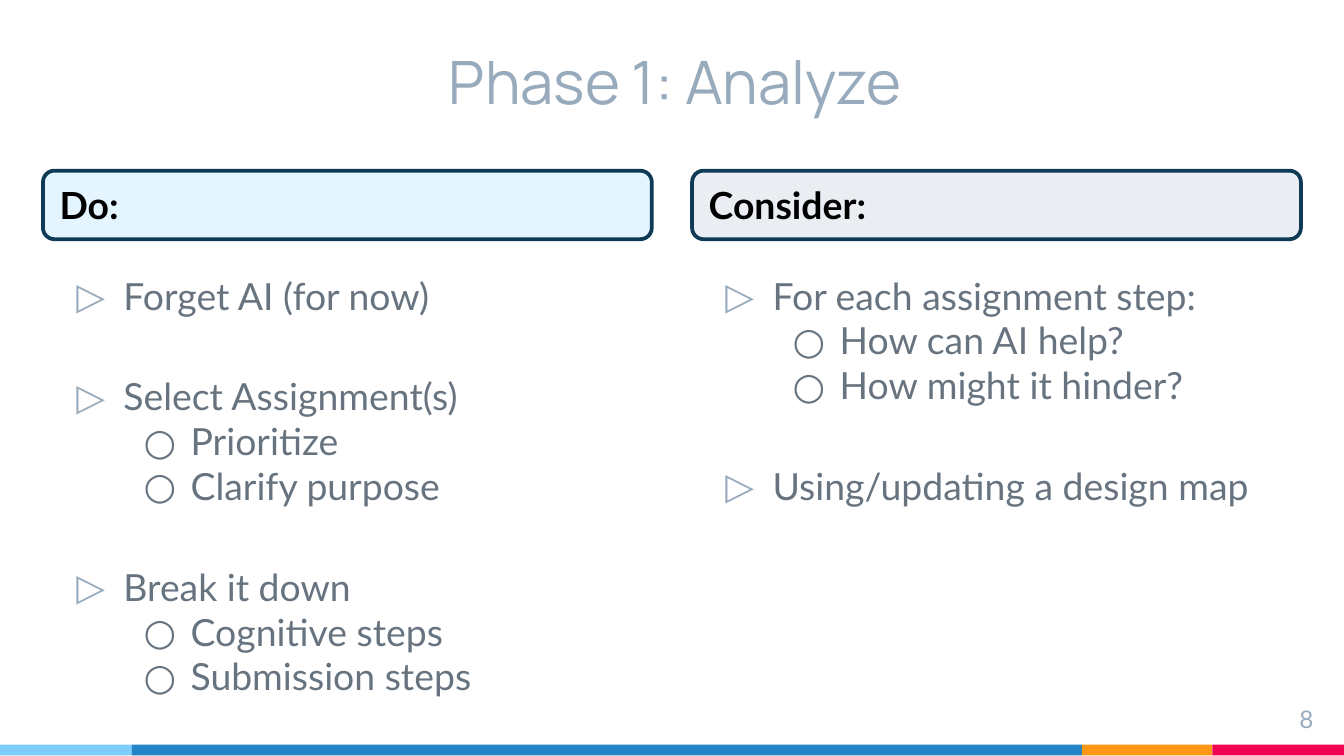
"""Build the "Phase 1: Analyze" slide with two bulleted columns."""
import lxml.etree
import pptx
import pptx.dml.color
import pptx.enum.shapes
import pptx.enum.text
import pptx.oxml.ns
import pptx.util

Inches = pptx.util.Inches
Pt = pptx.util.Pt
RGBColor = pptx.dml.color.RGBColor
SHAPE = pptx.enum.shapes.MSO_SHAPE
ALIGN = pptx.enum.text.PP_ALIGN
ANCHOR = pptx.enum.text.MSO_ANCHOR

MIST = RGBColor(0x97, 0xAB, 0xBC)
SLATE = RGBColor(0x67, 0x74, 0x80)
BLACK = RGBColor(0x00, 0x00, 0x00)
NAVY = RGBColor(0x0E, 0x3A, 0x56)
ICE = RGBColor(0xE5, 0xF5, 0xFF)
FOG = RGBColor(0xEA, 0xEE, 0xF2)
SKY = RGBColor(0x7E, 0xCE, 0xFD)
BLUE = RGBColor(0x21, 0x85, 0xC5)
AMBER = RGBColor(0xFF, 0x97, 0x15)
ROSE = RGBColor(0xF2, 0x02, 0x53)

STRIPES = [(0.98, SKY), (7.07, BLUE), (0.97, AMBER), (0.98, ROSE)]
MARKS = [("▷", MIST, 0.5), ("○", SLATE, 1)]
COLUMNS = [
    (0.32, ICE, "Do:", [
        ("Forget AI (for now)", []),
        ("Select Assignment(s)", ["Prioritize", "Clarify purpose"]),
        ("Break it down", ["Cognitive steps", "Submission steps"]),
    ]),
    (5.15, FOG, "Consider:", [
        ("For each assignment step:", ["How can AI help?", "How might it hinder?"]),
        ("Using/updating a design map", []),
    ]),
]
WIDTH = 4.53


def write(para, text, size=20, color=SLATE, font="Lato", bold=False, align=ALIGN.LEFT):
    para.alignment = align
    run = para.add_run()
    run.text = text
    run.font.size = Pt(size)
    run.font.color.rgb = color
    run.font.name = font
    run.font.bold = bold


def add_box(slide, left, top, width, height, anchor=ANCHOR.TOP):
    box = slide.shapes.add_textbox(Inches(left), Inches(top), Inches(width), Inches(height))
    frame = box.text_frame
    frame.word_wrap = True
    frame.vertical_anchor = anchor
    frame.margin_left = frame.margin_right = Inches(0.1)
    frame.margin_top = frame.margin_bottom = Inches(0.1)
    return frame


def add_block(slide, kind, left, top, width, height, fill):
    block = slide.shapes.add_shape(
        kind, Inches(left), Inches(top), Inches(width), Inches(height))
    block.shadow.inherit = False
    block.fill.solid()
    block.fill.fore_color.rgb = fill
    block.line.fill.background()
    return block


def add_stripes(slide):
    left = 0
    for width, color in STRIPES:
        add_block(slide, SHAPE.RECTANGLE, left, 5.54, width, 0.08, color)
        left += width


def add_header(slide, left, fill, text):
    block = add_block(slide, SHAPE.ROUNDED_RECTANGLE, left, 1.27, WIDTH, 0.51, fill)
    block.line.color.rgb = NAVY
    block.line.width = Pt(2)
    block.text_frame.vertical_anchor = ANCHOR.MIDDLE
    write(block.text_frame.paragraphs[0], text, color=BLACK, bold=True)


def add_mark(para, level):
    char, color, indent = MARKS[level]
    para.level = level
    props = para._p.get_or_add_pPr()
    props.set("marL", str(Inches(indent)))
    props.set("indent", str(Inches(-0.35)))
    name = pptx.oxml.ns.qn
    tint = lxml.etree.SubElement(props, name("a:buClr"))
    lxml.etree.SubElement(tint, name("a:srgbClr"), val=str(color))
    lxml.etree.SubElement(props, name("a:buFont"), typeface="Manrope")
    lxml.etree.SubElement(props, name("a:buChar"), char=char)


def add_list(slide, left, groups):
    frame = add_box(slide, left, 1.93, WIDTH, 3.4)
    para = frame.paragraphs[0]
    for order, (head, items) in enumerate(groups):
        if order:
            para = frame.add_paragraph()
        para.space_before = Pt(30 if order else 6)
        add_mark(para, 0)
        write(para, head)
        for item in items:
            para = frame.add_paragraph()
            para.space_before = Pt(0)
            add_mark(para, 1)
            write(para, item)


def main():
    deck = pptx.Presentation()
    deck.slide_width = Inches(10)
    deck.slide_height = deck.slide_width * 9 // 16
    slide = deck.slides.add_slide(deck.slide_layouts[6])
    add_stripes(slide)
    title = add_box(slide, 1.49, 0.03, 7.07, 0.94, anchor=ANCHOR.BOTTOM)
    write(title.paragraphs[0], "Phase 1: Analyze", size=32, color=MIST,
          font="Manrope", align=ALIGN.CENTER)
    for left, fill, head, groups in COLUMNS:
        add_header(slide, left, fill, head)
        add_list(slide, left, groups)
    number = add_box(slide, 9.27, 5.14, 0.6, 0.34)
    write(number.paragraphs[0], "8", size=13, color=MIST, align=ALIGN.RIGHT)
    deck.save("out.pptx")


if __name__ == "__main__":
    main()
